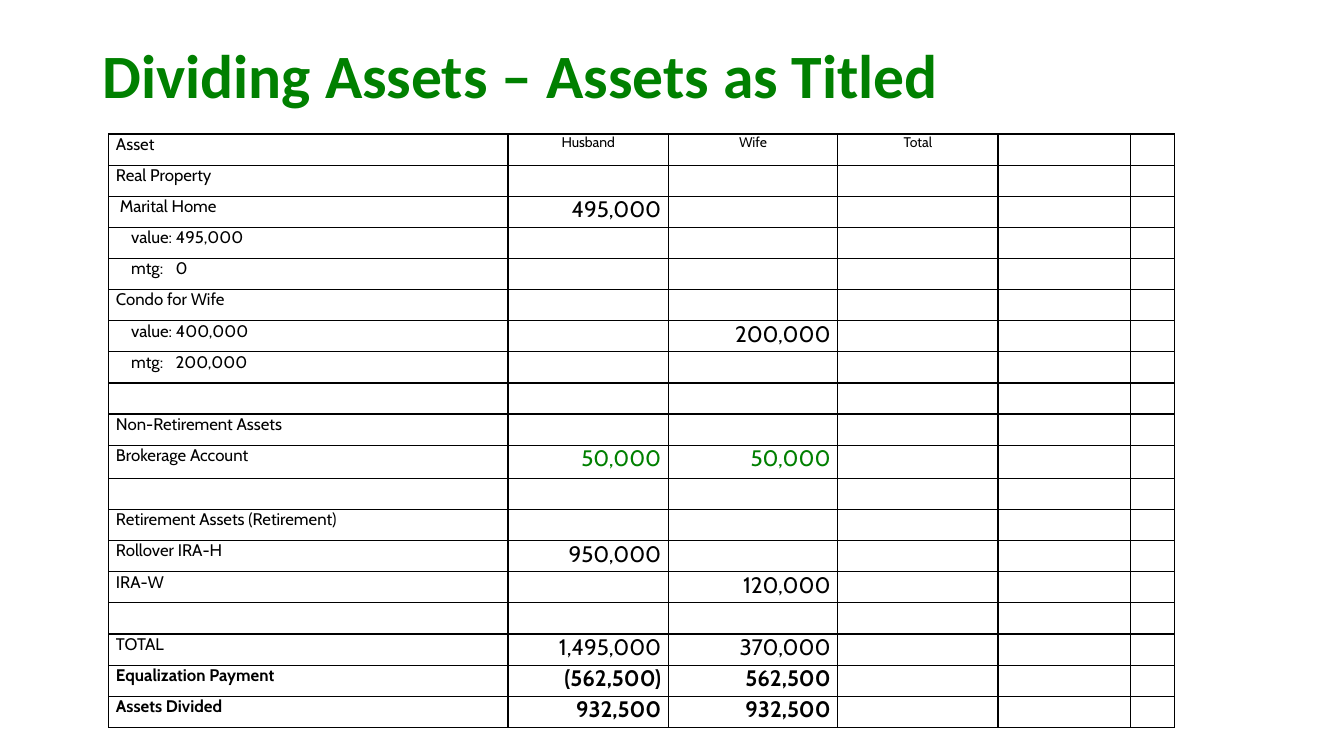
from dataclasses import dataclass

from lxml.etree import SubElement
from pptx import Presentation
from pptx.dml.color import RGBColor
from pptx.enum.text import MSO_ANCHOR, PP_ALIGN
from pptx.oxml.ns import qn
from pptx.slide import Slide
from pptx.table import _Cell
from pptx.util import Inches, Pt

SLIDE_WIDTH, SLIDE_HEIGHT = Inches(13.33), Inches(7.5)
BLACK, GREEN = "000000", "008000"
BODY_FONT, TITLE_FONT = "Cabin", "Calibri"

# Percentages of the slide's width and height
COLUMN_SHARES = (29.7, 11.93, 12.6, 11.93, 9.83, 3.3)
ROW_SHARE, BROKERAGE_SHARE = 4.12, 4.4
CELL_MARGIN = 0.53
DETAIL_INDENT = 1.13
MORTGAGE_TAB = 3.3


@dataclass(frozen=True)
class AssetRow:
    label: str = ""
    husband: str = ""
    wife: str = ""
    total: str = ""
    indent: float = 0
    header: bool = False
    bold: bool = False
    amount_color: str = BLACK
    height: float = ROW_SHARE


ASSET_ROWS = (
    AssetRow("Asset", "Husband", "Wife", "Total", header=True),
    AssetRow("Real Property"),
    AssetRow("Marital Home", "495,000", indent=0.28),
    AssetRow("value: 495,000", indent=DETAIL_INDENT),
    AssetRow("mtg:\t0", indent=DETAIL_INDENT),
    AssetRow("Condo for Wife"),
    AssetRow("value: 400,000", wife="200,000", indent=DETAIL_INDENT),
    AssetRow("mtg:\t200,000", indent=DETAIL_INDENT),
    AssetRow(),
    AssetRow("Non-Retirement Assets"),
    AssetRow("Brokerage Account", "50,000", "50,000",
             amount_color=GREEN, height=BROKERAGE_SHARE),
    AssetRow(),
    AssetRow("Retirement Assets (Retirement)"),
    AssetRow("Rollover IRA-H", "950,000"),
    AssetRow("IRA-W", wife="120,000"),
    AssetRow(),
    AssetRow("TOTAL", "1,495,000", "370,000"),
    AssetRow("Equalization Payment", "(562,500)", "562,500", bold=True),
    AssetRow("Assets Divided", "932,500", "932,500", bold=True),
)


def across(share: float) -> int:
    return round(SLIDE_WIDTH * share / 100)


def down(share: float) -> int:
    return round(SLIDE_HEIGHT * share / 100)


def color(value: str) -> RGBColor:
    return RGBColor.from_string(value)


def set_font(paragraph, name: str, size: int, value: str, bold: bool) -> None:
    font = paragraph.font
    font.name, font.size, font.bold = name, Pt(size), bold
    font.color.rgb = color(value)


def add_borders(cell: _Cell) -> None:
    properties = cell._tc.get_or_add_tcPr()
    for position, side in enumerate(("a:lnL", "a:lnR", "a:lnT", "a:lnB")):
        line = SubElement(properties, qn(side), w=str(Pt(1)))
        fill = SubElement(line, qn("a:solidFill"))
        SubElement(fill, qn("a:srgbClr"), val=BLACK)
        # Borders come before the cell's fill
        properties.insert(position, line)


def add_tab_stop(paragraph, position: int) -> None:
    properties = paragraph._p.get_or_add_pPr()
    tabs = SubElement(properties, qn("a:tabLst"))
    SubElement(tabs, qn("a:tab"), pos=str(position), algn="l")
    properties.insert(0, tabs)


def fill_cell(cell: _Cell, text: str, row: AssetRow, is_label: bool) -> None:
    cell.fill.background()
    add_borders(cell)
    cell.margin_top = cell.margin_bottom = 0
    cell.margin_right = across(CELL_MARGIN)
    cell.margin_left = across(CELL_MARGIN + (row.indent if is_label else 0))
    paragraph = cell.text_frame.paragraphs[0]
    paragraph.text = text
    if is_label:
        set_font(paragraph, BODY_FONT, 12, BLACK, row.bold)
    elif row.header:
        paragraph.alignment = PP_ALIGN.CENTER
        set_font(paragraph, BODY_FONT, 10, BLACK, row.bold)
    else:
        paragraph.alignment = PP_ALIGN.RIGHT
        set_font(paragraph, BODY_FONT, 16, row.amount_color, row.bold)
    if "\t" in text:
        add_tab_stop(paragraph, across(MORTGAGE_TAB))


def add_title(slide: Slide, text: str) -> None:
    box = slide.shapes.add_textbox(across(6.9), down(5.33), across(86.27), down(19.33))
    frame = box.text_frame
    frame.word_wrap = True
    frame.vertical_anchor = MSO_ANCHOR.TOP
    paragraph = frame.paragraphs[0]
    paragraph.text = text
    paragraph.line_spacing = 0.9
    set_font(paragraph, TITLE_FONT, 44, GREEN, True)


def add_asset_table(slide: Slide) -> None:
    height = sum(row.height for row in ASSET_ROWS)
    table = slide.shapes.add_table(
        len(ASSET_ROWS), len(COLUMN_SHARES),
        across(8.1), down(17.73), across(sum(COLUMN_SHARES)), down(height)).table
    table.first_row = table.horz_banding = False
    for column, share in zip(table.columns, COLUMN_SHARES):
        column.width = across(share)
    for table_row, row in zip(table.rows, ASSET_ROWS):
        table_row.height = down(row.height)
        texts = (row.label, row.husband, row.wife, row.total, "", "")
        for index, (cell, text) in enumerate(zip(table_row.cells, texts)):
            fill_cell(cell, text, row, is_label=index == 0)


def main() -> None:
    presentation = Presentation()
    presentation.slide_width, presentation.slide_height = SLIDE_WIDTH, SLIDE_HEIGHT
    slide = presentation.slides.add_slide(presentation.slide_layouts[6])
    add_title(slide, "Dividing Assets – Assets as Titled")
    add_asset_table(slide)
    presentation.save("out.pptx")


if __name__ == "__main__":
    main()
